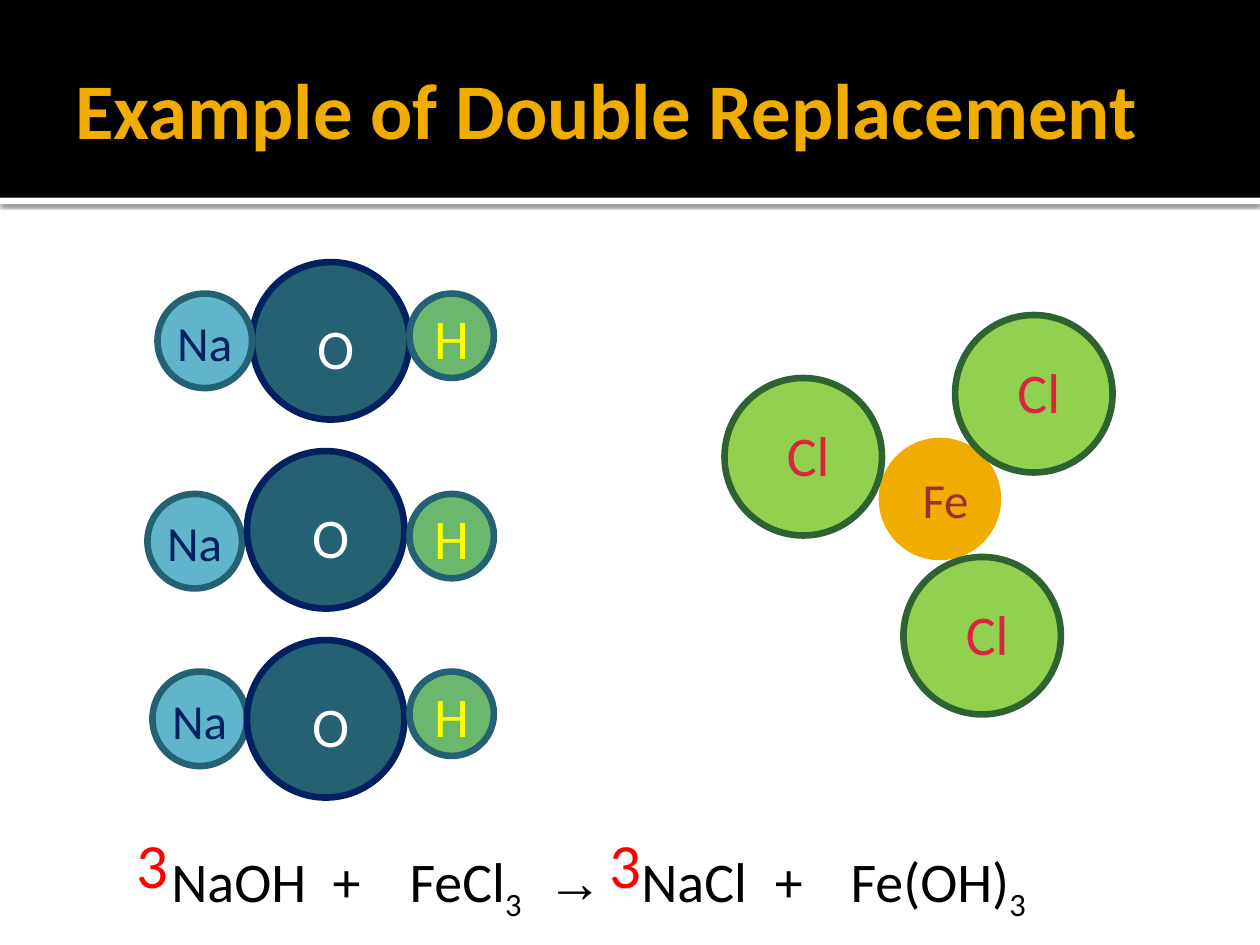
"""Build a slide showing a double replacement reaction with atoms and its equation."""
from typing import NamedTuple

import pptx
import pptx.dml.color
import pptx.enum.shapes
import pptx.enum.text
import pptx.oxml
import pptx.oxml.ns
import pptx.util

Inches = pptx.util.Inches
Pt = pptx.util.Pt
Align = pptx.enum.text.PP_ALIGN
Shape = pptx.enum.shapes.MSO_SHAPE
NAMESPACE = pptx.oxml.ns.nsdecls("a")


class Element(NamedTuple):
    """Look of one kind of atom, with its label's offset from the circle."""
    symbol: str
    diameter: float
    fill: str
    line: str
    label_color: str
    label_size: int
    label_dx: float
    label_dy: float


class Atom(NamedTuple):
    """One atom and its top left corner in inches."""
    element: Element
    left: float
    top: float


class Span(NamedTuple):
    """A piece of text with its own font and baseline shift."""
    text: str
    font: str = "Calibri"
    baseline: int = 0


OXYGEN = Element("O", 1.25, "246172", "002060", "FFFFFF", 32, 0.33, 0.36)
HYDROGEN = Element("H", 0.67, "6BB76D", "246172", "FFFF00", 32, 0, 0.03)
SODIUM = Element("Na", 0.75, "60B5CC", "246172", "002060", 28, 0.04, 0.1)
IRON = Element("Fe", 0.92, "F0AD00", "F0AD00", "9A3130", 28, 0.17, 0.18)
CHLORINE = Element("Cl", 1.25, "92D050", "2F6231", "D9253E", 32, 0.33, 0.29)

ATOMS = [
    Atom(OXYGEN, 2, 2.08), Atom(HYDROGEN, 3.25, 2.33), Atom(SODIUM, 1.25, 2.33),
    Atom(SODIUM, 1.17, 3.92), Atom(SODIUM, 1.21, 5.33),
    Atom(OXYGEN, 1.96, 5.08), Atom(OXYGEN, 1.96, 3.58),
    Atom(HYDROGEN, 3.25, 3.92), Atom(HYDROGEN, 3.25, 5.33),
    Atom(IRON, 7, 3.5),
    Atom(CHLORINE, 5.75, 3), Atom(CHLORINE, 7.17, 4.42), Atom(CHLORINE, 7.58, 2.5),
]
EQUATION = [
    Span("NaOH\t+\tFeCl"), Span("3", baseline=-25),
    Span("\t→\t", "Times New Roman"),
    Span("NaCl\t+\tFe(OH)"), Span("3", baseline=-25),
]
EQUATION_TABS = [1.28, 1.89, 2.98, 3.73, 4.79, 5.39]
COEFFICIENT_LEFTS = [0.92, 4.67]


def color(code: str) -> pptx.dml.color.RGBColor:
    """Turn a hex string into a colour."""
    return pptx.dml.color.RGBColor.from_string(code)


def add_shape(shapes, kind, left: float, top: float, width: float, height: float,
              fill: str, line: str | None = None):
    """Draw a filled shape, outlined when a line colour is given."""
    shape = shapes.add_shape(kind, Inches(left), Inches(top), Inches(width), Inches(height))
    shape.shadow.inherit = False
    shape.fill.solid()
    shape.fill.fore_color.rgb = color(fill)
    if line:
        shape.line.color.rgb = color(line)
        shape.line.width = Pt(3.78)
    else:
        shape.line.fill.background()
    return shape


def add_text(shapes, text: str | list[Span], left: float, top: float, width: float,
             height: float, *, size: float, font_color: str, bold: bool = False,
             align=Align.CENTER, anchor=pptx.enum.text.MSO_ANCHOR.TOP,
             grow: bool = True, inset: float = 0.1):
    """Write one paragraph of plain text or spans in a text box."""
    box = shapes.add_textbox(Inches(left), Inches(top), Inches(width), Inches(height))
    frame = box.text_frame
    frame.word_wrap = True
    sizing = pptx.enum.text.MSO_AUTO_SIZE
    frame.auto_size = sizing.SHAPE_TO_FIT_TEXT if grow else sizing.NONE
    frame.vertical_anchor = anchor
    frame.margin_left = Inches(inset)
    para = frame.paragraphs[0]
    para.alignment = align
    for span in [Span(text)] if isinstance(text, str) else text:
        run = para.add_run()
        run.text = span.text
        run.font.name = span.font
        run.font.size = Pt(size)
        run.font.bold = bold
        run.font.color.rgb = color(font_color)
        if span.baseline:
            run.font._element.set("baseline", str(span.baseline * 1000))
    return box


def add_tabs(box, stops: list[float]) -> None:
    """Give the first paragraph of a box left tab stops, in inches."""
    tabs = "".join(f'<a:tab pos="{Inches(stop)}" algn="l"/>' for stop in stops)
    properties = box.text_frame.paragraphs[0]._p.get_or_add_pPr()
    properties.append(pptx.oxml.parse_xml(f"<a:tabLst {NAMESPACE}>{tabs}</a:tabLst>"))


def add_drop_shadow(shape) -> None:
    """Put a soft black shadow below a shape."""
    effects = shape._element.spPr.find(pptx.oxml.ns.qn("a:effectLst"))
    effects.append(pptx.oxml.parse_xml(
        f'<a:outerShdw {NAMESPACE} blurRad="{Pt(2.5)}" dist="{Pt(0.8)}" dir="5400000">'
        '<a:srgbClr val="000000"><a:alpha val="60000"/></a:srgbClr></a:outerShdw>'))


def add_atom(page, atom: Atom) -> None:
    """Draw a circle grouped with its chemical symbol."""
    element = atom.element
    shapes = page.shapes.add_group_shape().shapes
    add_shape(shapes, Shape.OVAL, atom.left, atom.top, element.diameter, element.diameter,
              element.fill, element.line)
    add_text(shapes, element.symbol, atom.left + element.label_dx, atom.top + element.label_dy,
             0.67, 0.64 if element.label_size == 32 else 0.57,
             size=element.label_size, font_color=element.label_color)


def main() -> None:
    """Build and save the deck."""
    deck = pptx.Presentation()
    deck.slide_width, deck.slide_height = Inches(10), Inches(7.5)
    page = deck.slides.add_slide(deck.slide_layouts[6])
    add_drop_shadow(add_shape(page.shapes, Shape.RECTANGLE, 0, 1.57, 10, 0.05, "FFFFFF"))
    add_shape(page.shapes, Shape.RECTANGLE, 0, 0, 10, 1.57, "000000")
    for atom in ATOMS:
        add_atom(page, atom)
    add_text(page.shapes, "Example of Double Replacement", 0.5, 0.17, 9, 1.37,
             size=45, font_color="F0AD00", bold=True, align=Align.LEFT,
             anchor=pptx.enum.text.MSO_ANCHOR.MIDDLE, grow=False)
    equation = add_text(page.shapes, EQUATION, 1, 6.67, 7.58, 0.64, size=32,
                        font_color="000000", align=Align.LEFT, inset=0.36)
    add_tabs(equation, EQUATION_TABS)
    for left in COEFFICIENT_LEFTS:
        add_text(page.shapes, "3", left, 6.5, 0.58, 0.71, size=36, font_color="FF0000")
    deck.save("out.pptx")


if __name__ == "__main__":
    main()
